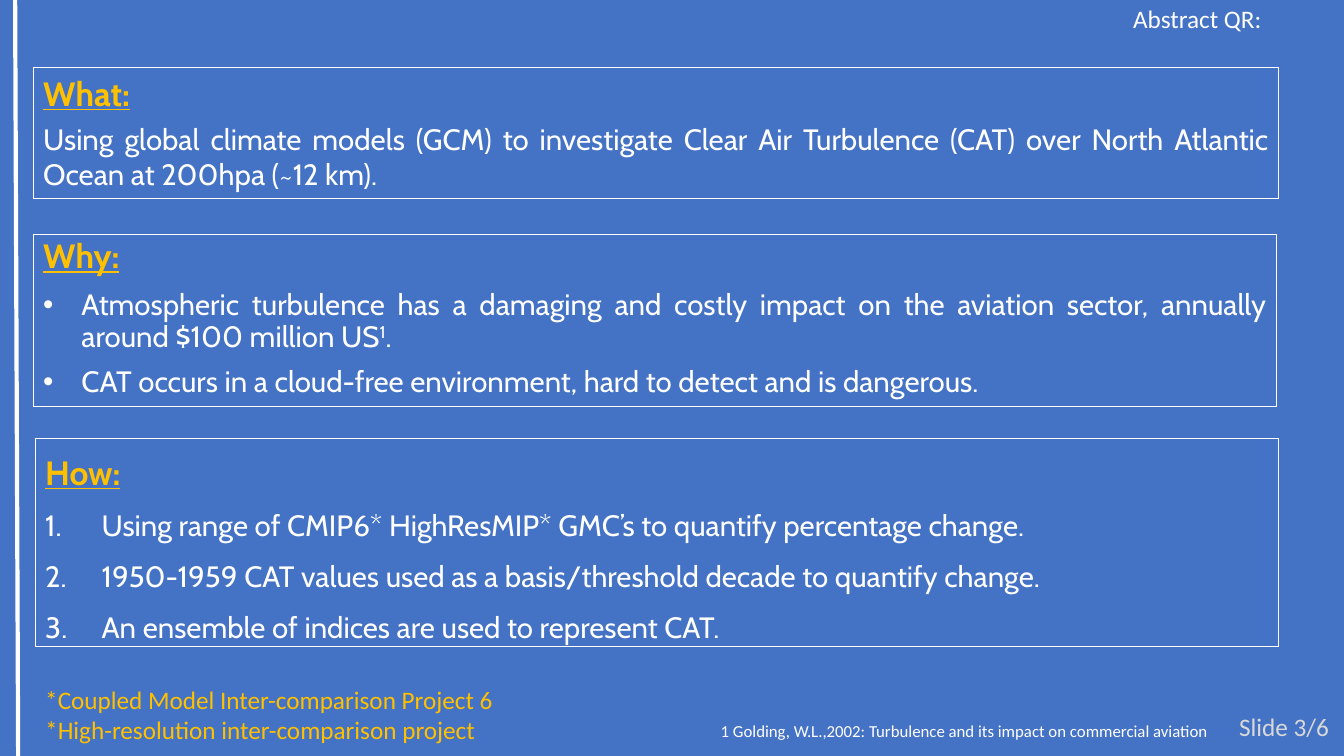
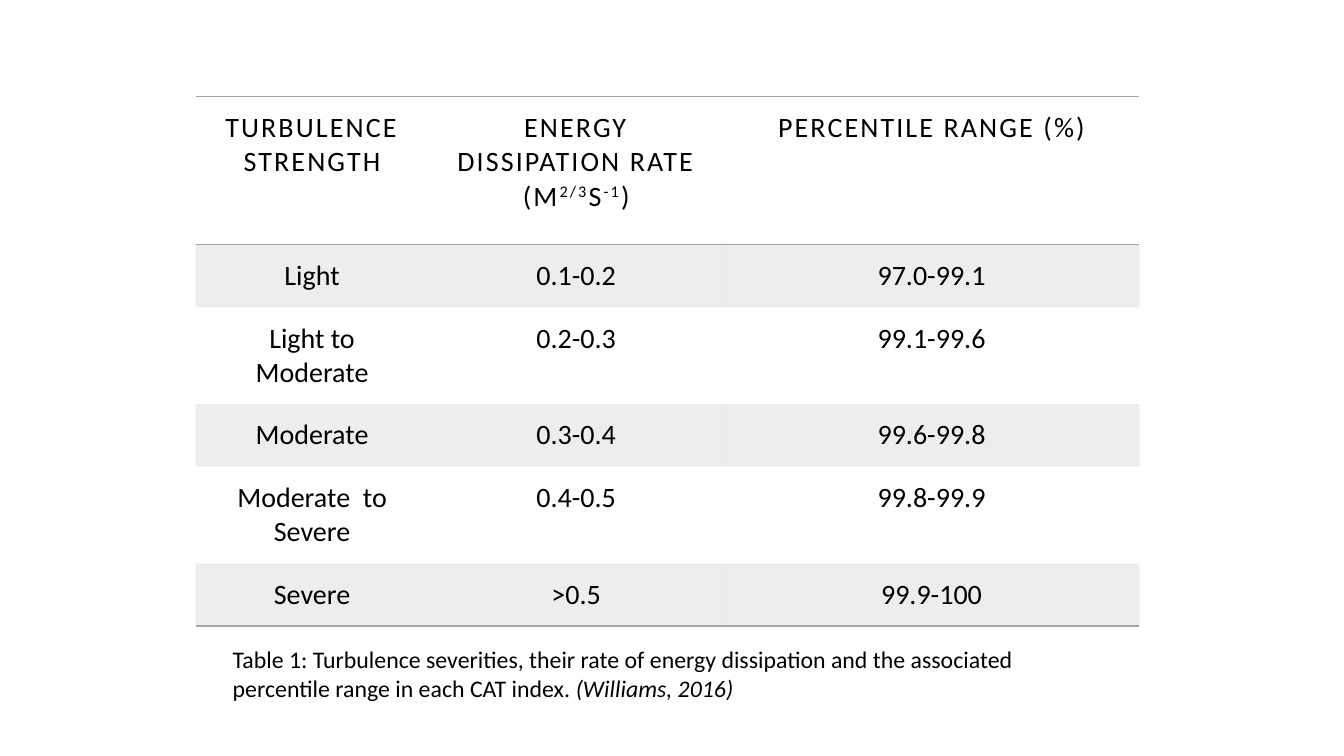
from dataclasses import dataclass

from lxml.etree import SubElement
from pptx import Presentation
from pptx.dml.color import RGBColor
from pptx.enum.shapes import MSO_CONNECTOR, MSO_SHAPE
from pptx.enum.text import MSO_ANCHOR, MSO_AUTO_SIZE, PP_ALIGN
from pptx.oxml import parse_xml
from pptx.oxml.ns import nsdecls, qn
from pptx.util import Inches, Pt


@dataclass(frozen=True)
class Theme:
    blue: str = "4472C4"
    white: str = "FFFFFF"
    gold: str = "FFC000"
    black: str = "000000"
    grey: str = "A5A5A5"
    pale: str = "D9D9D9"
    head_font: str = "Cabin"
    body_font: str = "Calibri"
    heading: int = 24
    body: int = 21
    table: int = 20
    note: int = 18
    caption: int = 17
    cite: int = 12


T = Theme()
LEFT, CENTER, RIGHT, JUSTIFY = (PP_ALIGN.LEFT, PP_ALIGN.CENTER,
                                PP_ALIGN.RIGHT, PP_ALIGN.JUSTIFY)
SUP = {"sup": True}
NO_STYLE = "{2D5ABB26-0587-4C30-8999-92F81FD0307C}"

# ---- Content: text is a string or a list of (text, format) runs ----
PANELS = [
    dict(at=(0.33, 0.67, 12.35, 1.3), heading="What:", head_align=LEFT,
         para=dict(after=6),
         items=["Using global climate models (GCM) to investigate Clear Air "
                "Turbulence (CAT) over North Atlantic Ocean at 200hpa (~12 km)."]),
    dict(at=(0.33, 2.33, 12.33, 1.7), heading="Why:", head_align=JUSTIFY,
         para=dict(before=10, spacing=0.9), bullet="•", indent=0.38,
         items=[[("Atmospheric turbulence has a damaging and costly impact on the "
                  "aviation sector, annually around $100 million US", {}),
                 ("1", SUP), (".", {})],
                "CAT occurs in a cloud-free environment, hard to detect and is "
                "dangerous."]),
    dict(at=(0.35, 4.35, 12.33, 2.06), heading="How:", head_align=JUSTIFY,
         para=dict(after=6, spacing=1.2), bullet="1.", indent=0.56,
         items=["Using range of CMIP6* HighResMIP* GMC’s to quantify percentage change.",
                "1950-1959 CAT values used as a basis/threshold decade to quantify change.",
                "An ensemble of indices are used to represent CAT."]),
]
NOTES = [
    dict(at=(0.35, 6.74, 6.31, 0.71), color=T.gold, size=T.note,
         lines=["*Coupled Model Inter-comparison Project 6",
                "*High-resolution inter-comparison project"]),
    dict(at=(10.28, 7.01, 3, 0.4), color=T.pale, size=T.note, align=RIGHT,
         anchor=MSO_ANCHOR.MIDDLE, lines=["Slide 3/6"]),
    dict(at=(11.14, -0.02, 1.54, 0.4), color=T.white, size=T.note,
         lines=["Abstract QR:"]),
    dict(at=(7.05, 7.1, 5.2, 0.3), color=T.white, size=T.cite,
         lines=["1 Golding, W.L.,2002: Turbulence and its impact on "
                "commercial aviation"]),
]
TABLE_AT = (1.94, 0.96, 9.37, 5.15)
COLS = (2.31, 2.93, 4.12)
ROWS = (1.47, 0.62, 0.9, 0.62, 0.9, 0.61)
CELLS = [
    ("TURBULENCE STRENGTH",
     [("ENERGY DISSIPATION RATE (M", {}), ("2/3", SUP), ("S", {}),
      ("-1", SUP), (")", {})],
     "PERCENTILE RANGE (%)"),
    ("Light", "0.1-0.2", "97.0-99.1"),
    ("Light to Moderate", "0.2-0.3", "99.1-99.6"),
    ("Moderate", "0.3-0.4", "99.6-99.8"),
    ("Moderate  to Severe", "0.4-0.5", "99.8-99.9"),
    ("Severe", ">0.5", "99.9-100"),
]
CAPTION = dict(
    at=(2.21, 6.35, 8.28, 0.98), color=T.black, size=T.caption,
    lines=[[("Table 1: Turbulence severities, their rate of energy dissipation and "
             "the associated percentile range in each CAT index. ", {}),
            ("(Williams, 2016)", {"italic": True})]])


# ---- Helpers ----
def rgb(color):
    return RGBColor.from_string(color)


def inches(values):
    return [Inches(v) for v in values]


def add_run(p, text, font, size, color, bold=False, italic=False,
            underline=False, sup=False, track=0):
    r = p.add_run()
    r.text = text
    f = r.font
    f.name, f.size, f.bold, f.italic = font, Pt(size), bold, italic
    f.underline = underline
    f.color.rgb = rgb(color)
    rPr = r._r.get_or_add_rPr()
    if sup:
        rPr.set("baseline", "30000")
    if track:
        rPr.set("spc", str(int(track * 100)))


def write(tf, text, align=LEFT, before=0, after=0, spacing=None,
          bullet=None, indent=0, **fmt):
    """Add one paragraph, filling the empty first one if it is free."""
    p = tf.paragraphs[0]
    if p.runs:
        p = tf.add_paragraph()
    p.alignment = align
    p.space_before, p.space_after = Pt(before), Pt(after)
    if spacing:
        p.line_spacing = spacing
    if bullet:
        pPr = p._p.get_or_add_pPr()
        pPr.set("marL", str(Inches(indent)))
        pPr.set("indent", str(-Inches(indent)))
        if bullet == "1.":
            SubElement(pPr, qn("a:buAutoNum"), type="arabicPeriod")
        else:
            SubElement(pPr, qn("a:buFont"), typeface="Arial")
            SubElement(pPr, qn("a:buChar"), char=bullet)
    for part, extra in [(text, {})] if isinstance(text, str) else text:
        add_run(p, part, **{**fmt, **extra})


def set_frame(tf, anchor=MSO_ANCHOR.TOP):
    tf.word_wrap = True
    tf.auto_size = MSO_AUTO_SIZE.NONE
    tf.vertical_anchor = anchor


def add_slide(prs, color):
    slide = prs.slides.add_slide(prs.slide_layouts[6])
    slide.background.fill.solid()
    slide.background.fill.fore_color.rgb = rgb(color)
    return slide


def add_note(slide, at, lines, color, size, align=LEFT, anchor=MSO_ANCHOR.TOP):
    tf = slide.shapes.add_textbox(*inches(at)).text_frame
    set_frame(tf, anchor)
    for line in lines:
        write(tf, line, align=align, font=T.body_font, size=size, color=color)


def add_panel(slide, at, heading, head_align, items, para, bullet=None, indent=0):
    sp = slide.shapes.add_shape(MSO_SHAPE.RECTANGLE, *inches(at))
    sp.shadow.inherit = False
    sp.fill.solid()
    sp.fill.fore_color.rgb = rgb(T.blue)
    sp.line.color.rgb = rgb(T.white)
    sp.line.width = Pt(0.75)
    tf = sp.text_frame
    set_frame(tf)
    write(tf, heading, align=head_align, font=T.head_font, size=T.heading,
          color=T.gold, bold=True, underline=True, **para)
    for item in items:
        write(tf, item, align=JUSTIFY, bullet=bullet, indent=indent,
              font=T.head_font, size=T.body, color=T.white, **para)


def add_side_line(slide):
    line = slide.shapes.add_connector(MSO_CONNECTOR.STRAIGHT,
                                      *inches((0.15, 0, 0.18, 7.5)))
    line.line.color.rgb = rgb(T.white)
    line.line.width = Pt(3)
    SubElement(line._element.spPr, qn("a:effectLst"))


def set_borders(cell, sides):
    tcPr = cell._tc.get_or_add_tcPr()
    for i, side in enumerate(sides):
        tcPr.insert(i, parse_xml(
            f'<a:ln{side} {nsdecls("a")} w="12700"><a:solidFill>'
            f'<a:srgbClr val="{T.grey}"/></a:solidFill></a:ln{side}>'))


def shade(cell, share):
    cell.fill.solid()
    cell.fill.fore_color.rgb = rgb(T.grey)
    clr = cell._tc.tcPr.find(".//" + qn("a:srgbClr"))
    SubElement(clr, qn("a:alpha"), val=str(share * 1000))


def add_severity_table(slide):
    table = slide.shapes.add_table(len(ROWS), len(COLS), *inches(TABLE_AT)).table
    table._tbl.tblPr.find(qn("a:tableStyleId")).text = NO_STYLE
    for col, width in zip(table.columns, COLS):
        col.width = Inches(width)
    for i, (row, height, texts) in enumerate(zip(table.rows, ROWS, CELLS)):
        row.height = Inches(height)
        borders = "TB" if i == 0 else "B" if i == len(ROWS) - 1 else ""
        for cell, text in zip(row.cells, texts):
            cell.margin_left = cell.margin_right = Inches(0.14)
            cell.margin_top = cell.margin_bottom = Inches(0.14)
            if i % 2:
                shade(cell, 20)
            else:
                cell.fill.background()
            set_borders(cell, borders)
            write(cell.text_frame, text, align=CENTER, font=T.body_font,
                  size=T.table, color=T.black, track=0 if i else 1.5)


def main():
    prs = Presentation()
    prs.slide_width, prs.slide_height = Inches(13.33), Inches(7.5)

    # What, why and how
    slide = add_slide(prs, T.blue)
    add_side_line(slide)
    for panel in PANELS:
        add_panel(slide, **panel)
    for note in NOTES:
        add_note(slide, **note)

    # Turbulence severity table
    slide = add_slide(prs, T.white)
    add_severity_table(slide)
    add_note(slide, **CAPTION)

    prs.save("out.pptx")


if __name__ == "__main__":
    main()
